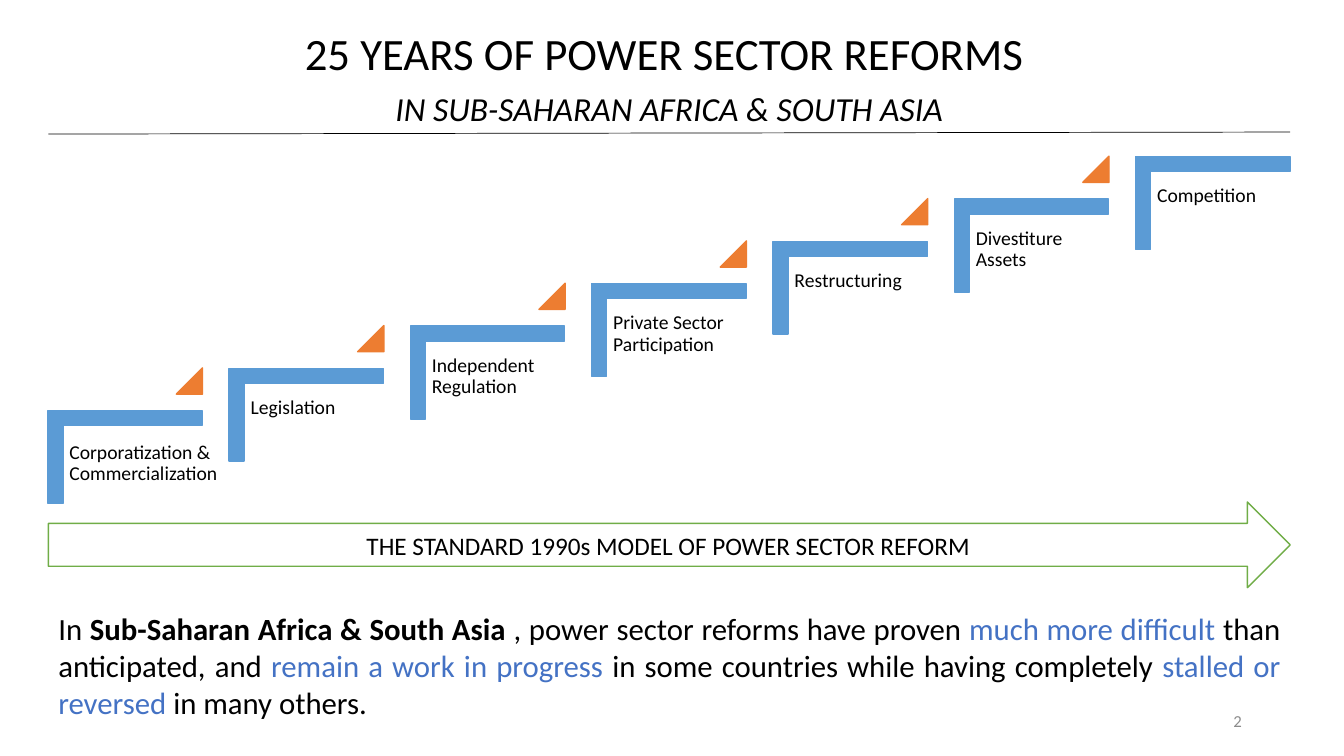
from lxml import etree
from pptx import Presentation
from pptx.dml import color
from pptx.enum import shapes, text
from pptx.oxml import ns
from pptx.util import Pt

COLORS = {
    "black": "000000",
    "step": "5B9BD5",
    "rise": "ED7D31",
    "arrow": "70AD47",
    "accent": "4472C4",
    "number": "8C8C8C",
}
STEPS = [
    "Corporatization & Commercialization",
    "Legislation",
    "Independent Regulation",
    "Private Sector Participation",
    "Restructuring",
    "Divestiture Assets",
    "Competition",
]
SUMMARY = [
    ("In ", {}),
    ("Sub-Saharan Africa & South Asia ", {"bold": True}),
    (", power sector reforms have proven ", {}),
    ("much more difficult", {"color": "accent"}),
    (" than anticipated, and ", {}),
    ("remain a work in progress ", {"color": "accent"}),
    ("in some countries while having completely ", {}),
    ("stalled or reversed ", {"color": "accent"}),
    ("in many others. ", {}),
]
STEP_RUN = 129.5
STEP_RISE = 30.24
LEFT, WIDTH = 34.56, 887.04


def rgb(name):
    return color.RGBColor.from_string(COLORS[name])


def set_all(target, values):
    for name, value in values.items():
        setattr(target, name, value)


def add_figure(page, kind, frame, fill, line, adjustments=(), rotation=0):
    figure = page.shapes.add_shape(kind, *map(Pt, frame))
    figure.shadow.inherit = False
    figure.rotation = rotation
    for index, value in enumerate(adjustments):
        figure.adjustments[index] = value
    if fill:
        figure.fill.solid()
        figure.fill.fore_color.rgb = rgb(fill)
    else:
        figure.fill.background()
    figure.line.color.rgb = rgb(line)
    figure.line.width = Pt(1)


def add_line(page, start, end, width):
    line = page.shapes.add_connector(shapes.MSO_CONNECTOR.STRAIGHT, *map(Pt, start + end))
    line.line.color.rgb = rgb("black")
    line.line.width = Pt(width)
    etree.SubElement(line._element.spPr, ns.qn("a:effectLst"))


def add_text(page, frame, paragraphs, para_format=None, box_format=None):
    box = page.shapes.add_textbox(*map(Pt, frame)).text_frame
    set_all(box, {"word_wrap": True, **(box_format or {})})
    for index, spans in enumerate(paragraphs):
        para = box.add_paragraph() if index else box.paragraphs[0]
        set_all(para, para_format or {})
        for words, size, style in spans:
            span = para.add_run()
            span.text = words
            font = {"name": "Calibri", "size": Pt(size), **style}
            span.font.color.rgb = rgb(font.pop("color", "black"))
            set_all(span.font, font)
    return box


def add_step(page, index, label):
    across, up = index * STEP_RUN, index * STEP_RISE
    is_first, is_last = index == 0, index == len(STEPS) - 1
    add_figure(page, shapes.MSO_SHAPE.CORNER, (56.16 + across, 271.44 - up, 66.24, 110.16),
               "step", "step", (0.161, 0.161), 90)
    insets = {"margin_" + side: Pt(4.32) for side in ("left", "top", "right", "bottom")}
    add_text(page, (45.2 + across, (311.76 if is_first else 310) - up, 114.5 if is_first else 99.36, 87.12),
             [[(label, 14, {})]], {"line_spacing": 0.9}, insets)
    if not is_last:
        add_figure(page, shapes.MSO_SHAPE.ISOSCELES_TRIANGLE,
                   (126 + across, 262.8 - up, 18.72, 18.72), "rise", "rise", (1,))


def main():
    deck = Presentation()
    deck.slide_width, deck.slide_height = Pt(960), Pt(540)
    page = deck.slides.add_slide(deck.slide_layouts[6])
    centred = {"alignment": text.PP_ALIGN.CENTER}

    for index, label in enumerate(STEPS):
        add_step(page, index, label)

    add_text(page, (LEFT, 432, WIDTH, 87.12),
             [[(words, 22, style) for words, style in SUMMARY]],
             {"alignment": text.PP_ALIGN.JUSTIFY})
    title = add_text(page, (156.24, 15.12, 643.68, 81.36),
                     [[("25 YEARS OF POWER SECTOR REFORMS ", 32, {})],
                      [("IN SUB-SAHARAN AFRICA & SOUTH ASIA", 24, {"italic": True})]], centred)
    title.paragraphs[0].space_after = Pt(6)
    add_line(page, (LEFT, 95.76), (LEFT + WIDTH, 94.32), 0.5)

    add_figure(page, shapes.MSO_SHAPE.RIGHT_ARROW, (LEFT, 358.56, WIDTH, 61.2), None, "arrow")
    add_text(page, (168.48, 375.12, 617.76, 28.8),
             [[("THE STANDARD 1990s MODEL OF POWER SECTOR REFORM", 18, {})]], centred)
    add_text(page, (678.24, 500.4, 216, 28.8), [[("2", 12, {"color": "number"})]],
             {"alignment": text.PP_ALIGN.RIGHT}, {"vertical_anchor": text.MSO_ANCHOR.MIDDLE})
    deck.save("out.pptx")


if __name__ == "__main__":
    main()
